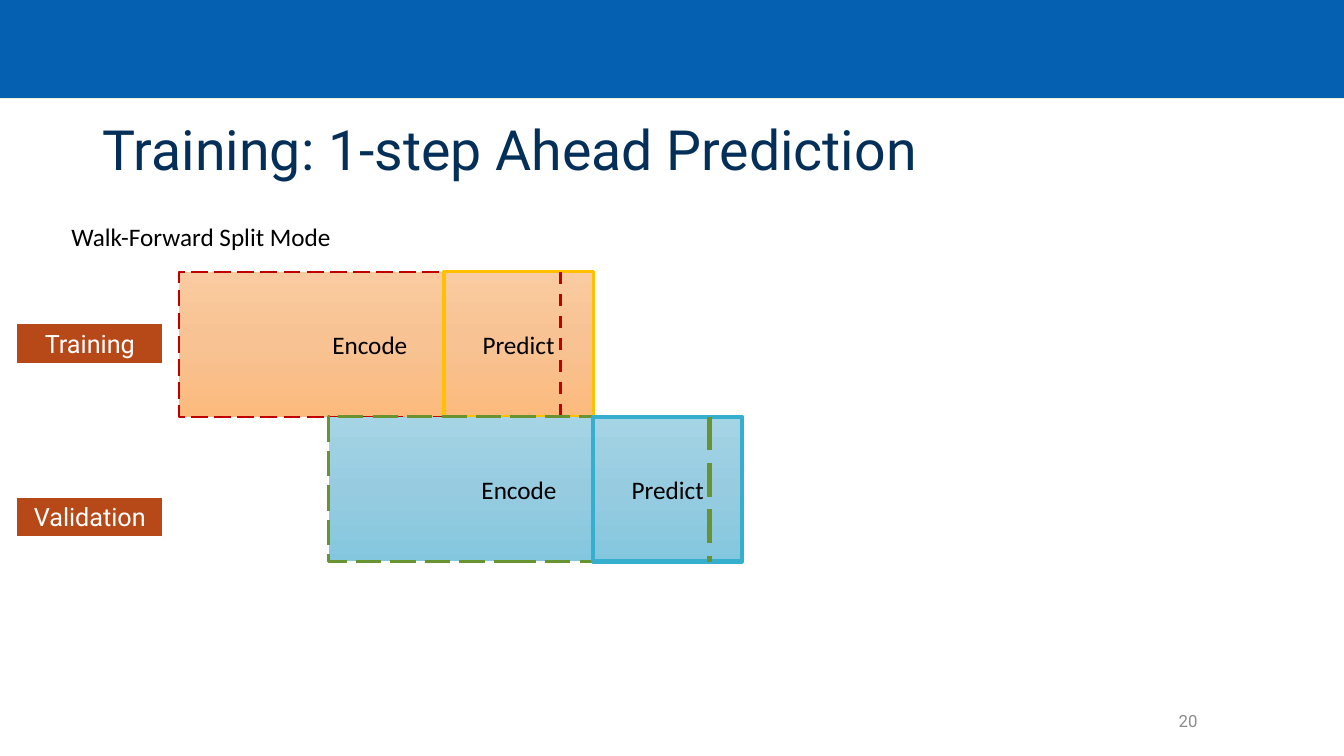
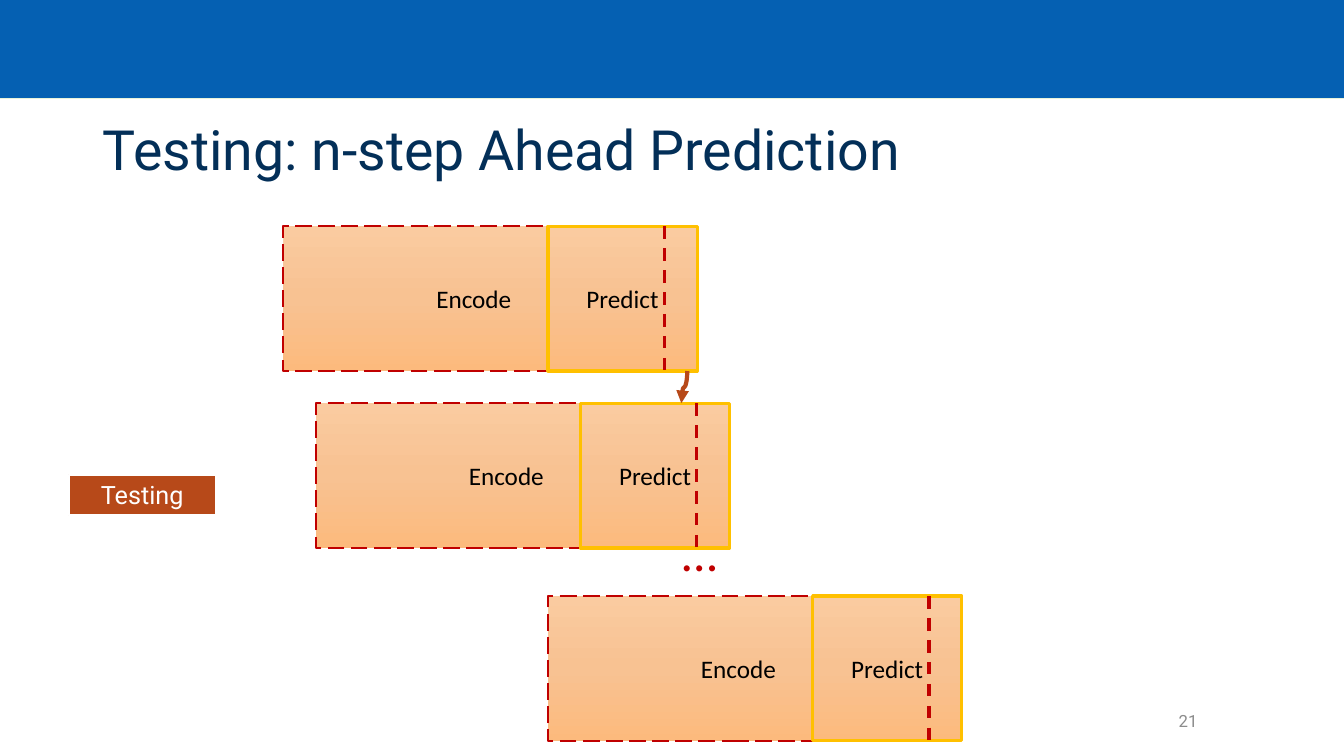
from copy import deepcopy
from dataclasses import dataclass

from lxml.etree import SubElement
from pptx import Presentation
from pptx.dml.color import RGBColor as Rgb
from pptx.enum.dml import MSO_LINE as Dash
from pptx.enum.shapes import MSO_CONNECTOR as Link, MSO_SHAPE as Preset
from pptx.enum.text import MSO_ANCHOR as Anchor, MSO_AUTO_SIZE as Fit, PP_ALIGN as Align
from pptx.oxml.ns import qn
from pptx.util import Cm, Pt


@dataclass(frozen=True)
class Theme:
    heading_font: str = "Roboto"
    body_font: str = "Calibri"
    title_size: float = 39.6
    body_size: float = 18
    number_size: float = 12
    ellipsis_size: float = 36
    title: str = "032F58"
    band: str = "0560B2"
    band_edge: str = "E8F3DA"
    number: str = "8C8C8C"
    label: str = "B74919"
    light: str = "FFFFFF"
    dark: str = "000000"
    accent: str = "C00000"


@dataclass(frozen=True)
class WindowStyle:
    gradient: tuple
    encode_line: str
    encode_width: float
    predict_line: str
    predict_width: float
    divider_width: float
    divider_dash: Dash


THEME = Theme()
ORANGE = WindowStyle(("FACBA0", "F8C292", "FCBA7D"), THEME.accent, 1.5,
                     "FFC000", 2.25, 2.25, Dash.DASH)
BLUE = WindowStyle(("A5D4E5", "97CCE0", "83C7DF"), "699331", 2.25,
                   "36AFCE", 3, 3, Dash.LONG_DASH)

ENCODE_WIDTH, PREDICT_WIDTH, WINDOW_HEIGHT = 9.6, 3.76, 3.65
PREDICT_OFFSET = 6.67


def color(code):
    return Rgb.from_string(code)


def write(frame, text, size, font, ink, align=Align.LEFT, anchor=Anchor.TOP):
    frame.text = text
    frame.vertical_anchor = anchor
    paragraph = frame.paragraphs[0]
    paragraph.alignment = align
    for run in paragraph.runs:
        run.font.size = Pt(size)
        run.font.name = font
        run.font.color.rgb = color(ink)


def stroke(line, ink, width, dash=None):
    line.color.rgb = color(ink)
    line.width = Pt(width)
    if dash is not None:
        line.dash_style = dash


def add_box(slide, left, top, width, height, fill):
    box = slide.shapes.add_shape(Preset.RECTANGLE, Cm(left), Cm(top), Cm(width), Cm(height))
    box.shadow.inherit = False
    if isinstance(fill, str):
        box.fill.solid()
        box.fill.fore_color.rgb = color(fill)
    else:
        fill_gradient(box, fill)
    return box


def fill_gradient(box, codes):
    box.fill.gradient()
    box.fill.gradient_angle = 270
    stops = next(box.element.iter(qn("a:gsLst")))
    for _ in codes[2:]:
        stops.insert(1, deepcopy(stops[0]))
    for index, (stop, code) in enumerate(zip(box.fill.gradient_stops, codes)):
        stop.position = index / (len(codes) - 1)
        stop.color.rgb = color(code)


def add_text(slide, left, top, width, height, *text, wrap=True, **options):
    frame = slide.shapes.add_textbox(Cm(left), Cm(top), Cm(width), Cm(height)).text_frame
    frame.word_wrap = wrap
    write(frame, *text, **options)


def add_link(slide, kind, start, end, ink, width, dash=None):
    link = slide.shapes.add_connector(kind, *map(Cm, start), *map(Cm, end))
    stroke(link.line, ink, width, dash)
    SubElement(link.element.spPr, qn("a:effectLst"))
    return link


def add_downward_curve(slide, start, end):
    center_x, center_y = (start[0] + end[0]) / 2, (start[1] + end[1]) / 2
    half_run, half_shift = (end[1] - start[1]) / 2, (start[0] - end[0]) / 2
    curve = add_link(slide, Link.CURVE,
                     (center_x - half_run, center_y - half_shift),
                     (center_x + half_run, center_y + half_shift), THEME.label, 3)
    curve.element.spPr.find(qn("a:xfrm")).set("rot", str(90 * 60000))
    SubElement(curve.line._get_or_add_ln(), qn("a:tailEnd"), type="triangle")


def add_window(slide, left, top, style):
    parts = (
        ("Encode", left, ENCODE_WIDTH, style.encode_line, style.encode_width, Dash.LONG_DASH),
        ("Predict", left + PREDICT_OFFSET, PREDICT_WIDTH,
         style.predict_line, style.predict_width, None),
    )
    for name, part_left, width, ink, weight, dash in parts:
        part = add_box(slide, part_left, top, width, WINDOW_HEIGHT, style.gradient)
        stroke(part.line, ink, weight, dash)
        write(part.text_frame, name, THEME.body_size, THEME.body_font, THEME.dark,
              Align.CENTER, Anchor.MIDDLE)
    divider = left + ENCODE_WIDTH
    add_link(slide, Link.STRAIGHT, (divider, top), (divider, top + WINDOW_HEIGHT),
             style.encode_line, style.divider_width, style.divider_dash)


def add_label(slide, left, top, name):
    label = add_box(slide, left, top, 3.71, 1.02, THEME.label)
    stroke(label.line, THEME.light, 1.5)
    write(label.text_frame, name, THEME.body_size, THEME.heading_font, THEME.light,
          Align.CENTER)


def add_band(slide):
    band = add_box(slide, -0.1, -0.1, 34.07, 2.59, THEME.band)
    stroke(band.line, THEME.band_edge, 1)
    slide.slide_layout.shapes.element.insert(2, band.element)


def add_slide(deck, heading, number):
    slide = deck.slides.add_slide(deck.slide_layouts[5])
    title = slide.shapes.title
    title.left, title.top, title.width, title.height = map(Cm, (2.34, 3, 29.21, 1.7))
    write(title.text_frame, heading, THEME.title_size, THEME.heading_font, THEME.title,
          anchor=Anchor.MIDDLE)
    title.text_frame.auto_size = Fit.NONE
    title.text_frame.paragraphs[0].line_spacing = 0.9
    add_text(slide, 23.93, 17.65, 6.5, 1.02, number, THEME.number_size,
             THEME.heading_font, THEME.number, align=Align.RIGHT, anchor=Anchor.MIDDLE)
    return slide


def build_training(deck):
    slide = add_slide(deck, "Training: 1-step Ahead Prediction", "20")
    add_band(slide)
    left, top = 4.52, 6.85
    add_window(slide, left, top, ORANGE)
    add_window(slide, left + PREDICT_WIDTH, top + WINDOW_HEIGHT, BLUE)
    add_label(slide, 0.41, 8.15, "Training")
    add_label(slide, 0.41, 12.52, "Validation")
    add_text(slide, 1.55, 5.46, 7.14, 1.02, "Walk-Forward Split Mode", THEME.body_size,
             THEME.body_font, THEME.dark, wrap=False)


def build_testing(deck):
    slide = add_slide(deck, "Testing: n-step Ahead Prediction", "21")
    for left, top in ((7.14, 5.7), (7.96, 10.16), (13.81, 15.02)):
        add_window(slide, left, top, ORANGE)
    add_label(slide, 1.73, 11.96, "Testing")
    add_text(slide, 16.94, 13, 6.65, 1.8, "…", THEME.ellipsis_size,
             THEME.body_font, THEME.accent)
    add_downward_curve(slide, (17.32, 9.35), (17.17, 10.16))


def main():
    deck = Presentation()
    deck.slide_width, deck.slide_height = Cm(33.87), Cm(19.05)
    build_training(deck)
    build_testing(deck)
    deck.save("out.pptx")


if __name__ == "__main__":
    main()
